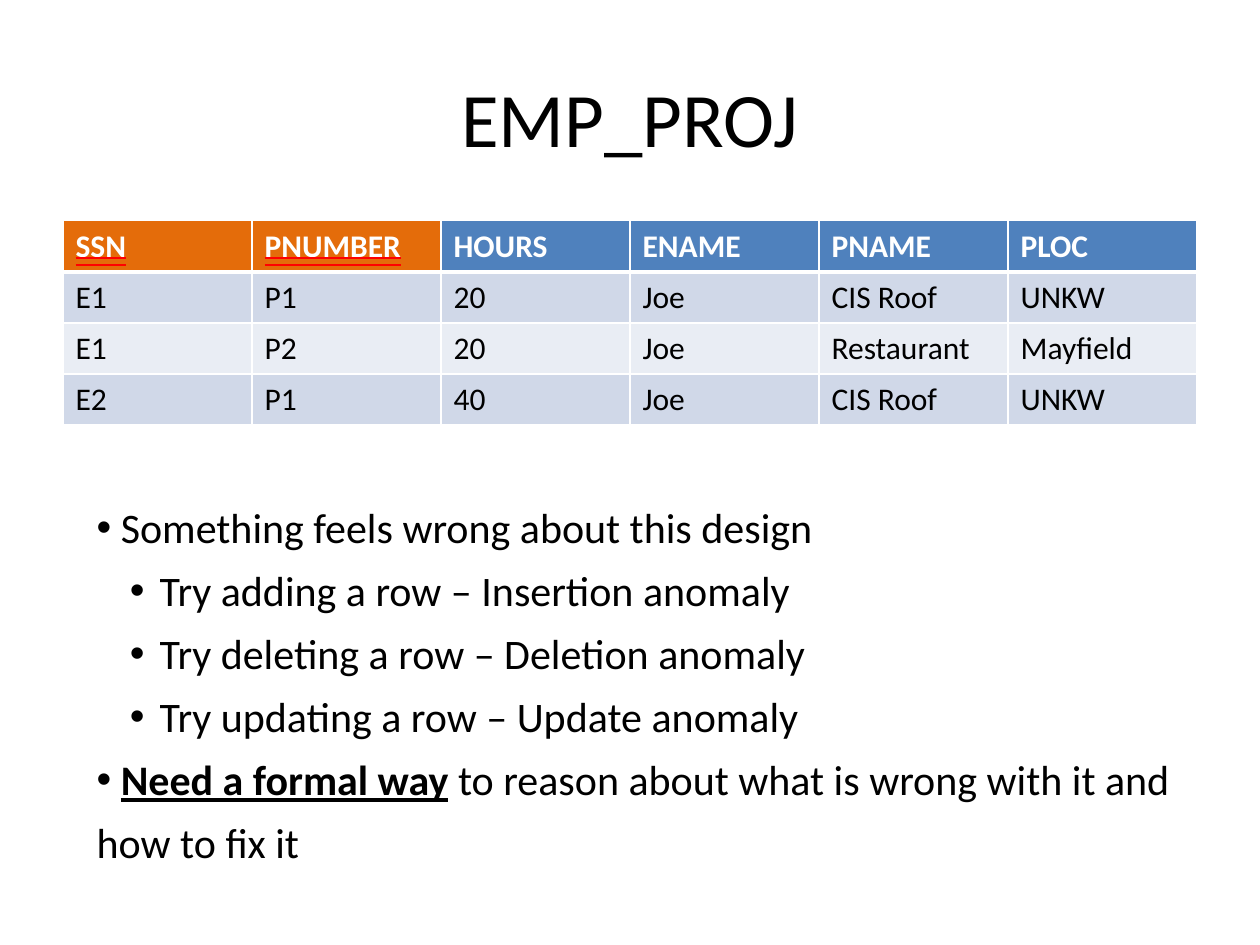
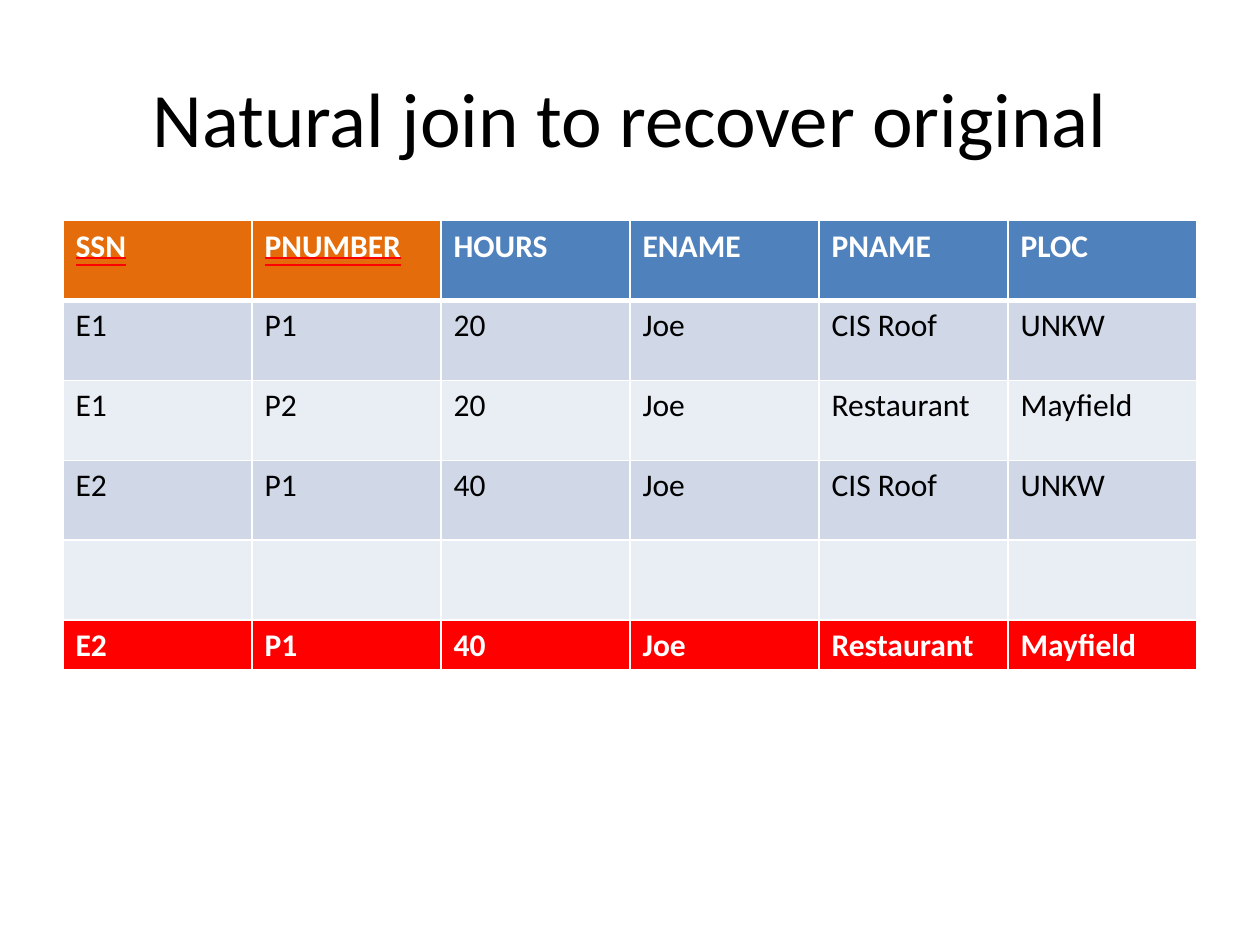
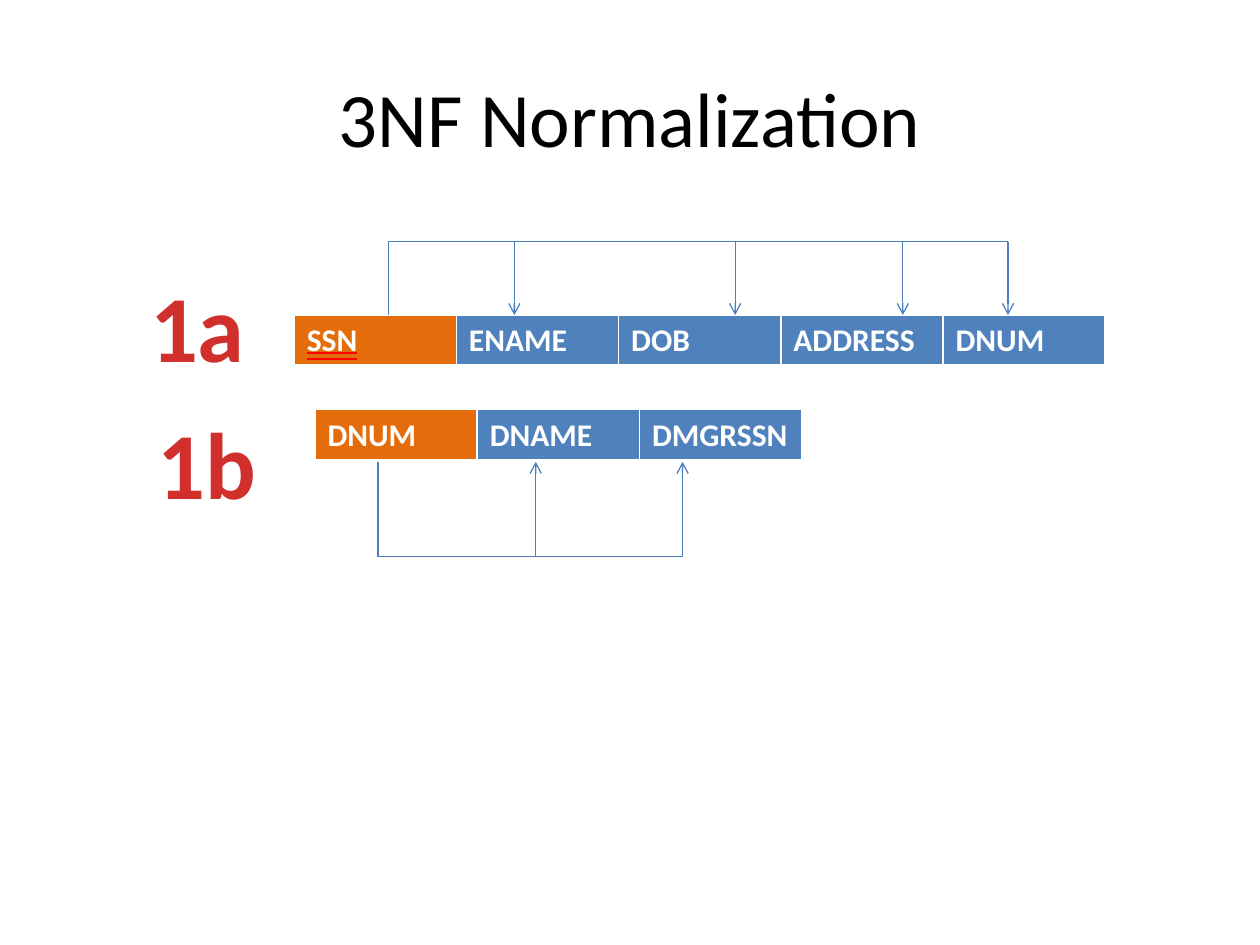
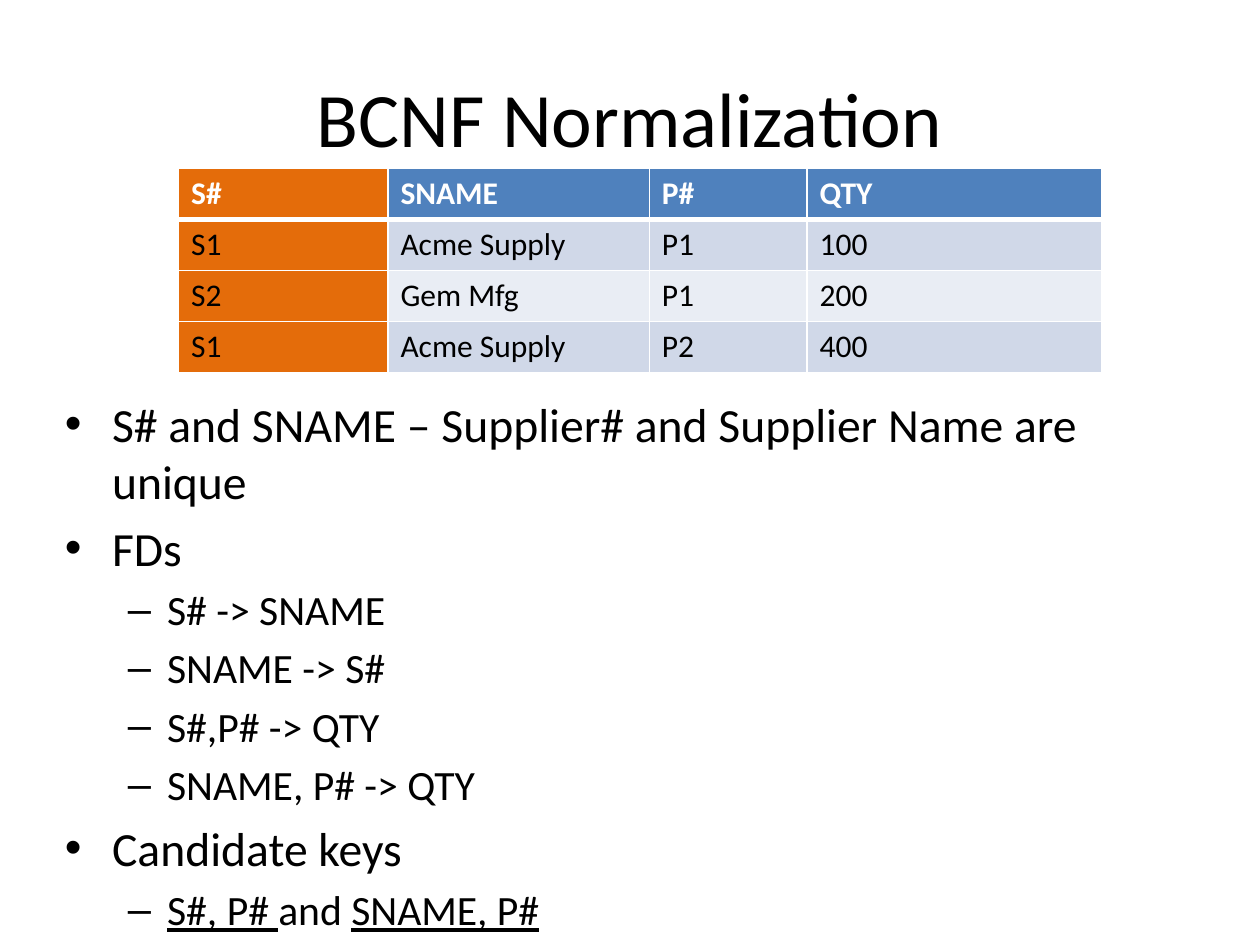
from lxml.etree import SubElement
from pptx import Presentation
from pptx.dml.color import RGBColor
from pptx.enum.shapes import MSO_CONNECTOR
from pptx.enum.text import MSO_ANCHOR, MSO_UNDERLINE, PP_ALIGN
from pptx.oxml import parse_xml
from pptx.oxml.ns import nsdecls, qn
from pptx.util import Cm, Pt

FONT = "Calibri"
COLORS = {
    "text": "000000", "white": "FFFFFF", "key": "E46C0A", "head": "4F81BD",
    "odd": "D0D8E8", "even": "E9EDF4", "alert": "FF0000", "line": "4B7EBC",
    "label": "D02F2C",
}


def add_run(p, text, size, color="text", bold=False, underline=None):
    r = p.add_run()
    r.text = text
    r.font.size = Pt(size)
    r.font.bold = bold
    r.font.underline = underline
    r.font.color.rgb = RGBColor.from_string(COLORS[color])
    if underline == MSO_UNDERLINE.DOUBLE_LINE:
        r.font._element.append(parse_xml(
            f'<a:uFill {nsdecls("a")}><a:solidFill><a:srgbClr val="{COLORS["alert"]}"/>'
            '</a:solidFill></a:uFill>'))
    r.font.name = FONT


def add_grid(s, x, y, widths, height, rows, keys=1, underline=None, head="head"):
    tbl = s.shapes.add_table(len(rows), len(widths), Cm(x), Cm(y),
                             Cm(sum(widths)), Cm(height * len(rows))).table
    for col, width in zip(tbl.columns, widths):
        col.width = Cm(width)
    for i, row in enumerate(rows):
        tbl.rows[i].height = Cm(height)
        for j, text in enumerate(row):
            cell = tbl.cell(i, j)
            tcPr = cell._tc.get_or_add_tcPr()
            for side in "LRTB":
                thick = (i, side) in ((0, "B"), (1, "T"))
                tcPr.append(parse_xml(
                    f'<a:ln{side} {nsdecls("a")} w="{Pt(3 if thick else 1)}"><a:solidFill>'
                    f'<a:srgbClr val="{COLORS["white"]}"/></a:solidFill></a:ln{side}>'))
            is_key = i == 0 and j < keys
            fill = "key" if is_key else head if i == 0 else "odd" if i % 2 else "even"
            cell.fill.solid()
            cell.fill.fore_color.rgb = RGBColor.from_string(COLORS[fill])
            if text:
                add_run(cell.text_frame.paragraphs[0], text, 18, "text" if i else "white",
                        i == 0, underline if is_key else None)
    return tbl


prs = Presentation()
prs.slide_width, prs.slide_height = Cm(25.4), Cm(19.05)

slides = []
for title in ("EMP_PROJ", "Natural join to recover original",
              "3NF Normalization", "BCNF Normalization"):
    s = prs.slides.add_slide(prs.slide_layouts[5])
    sp = s.shapes.title
    sp.left, sp.top, sp.width, sp.height = Cm(1.27), Cm(0.76), Cm(22.86), Cm(3.18)
    tf = sp.text_frame
    tf.vertical_anchor = MSO_ANCHOR.MIDDLE
    p = tf.paragraphs[0]
    p.alignment = PP_ALIGN.CENTER
    add_run(p, title, 44)
    slides.append(s)
emp_proj, natural_join, third_nf, bcnf = slides

DOUBLE = MSO_UNDERLINE.DOUBLE_LINE
ROW = 1.03
emp_widths = [3.81] * 6
emp_rows = [
    ["SSN", "PNUMBER", "HOURS", "ENAME", "PNAME", "PLOC"],
    ["E1", "P1", "20", "Joe", "CIS Roof", "UNKW"],
    ["E1", "P2", "20", "Joe", "Restaurant", "Mayfield"],
    ["E2", "P1", "40", "Joe", "CIS Roof", "UNKW"],
]
add_grid(emp_proj, 1.27, 4.45, emp_widths, ROW, emp_rows, 2, DOUBLE)
add_grid(natural_join, 1.27, 4.45, emp_widths, 1.61, emp_rows + [[""] * 6], 2, DOUBLE)
add_grid(natural_join, 1.27, 12.5, emp_widths, ROW,
         [["E2", "P1", "40", "Joe", "Restaurant", "Mayfield"]], 0, head="alert")

add_grid(third_nf, 6.35, 8.26, [3.27] * 3, ROW, [["DNUM", "DNAME", "DMGRSSN"]])
add_grid(third_nf, 5.93, 6.35, [3.27] * 5, ROW,
         [["SSN", "ENAME", "DOB", "ADDRESS", "DNUM"]], underline=DOUBLE)

for edge, bus, key, targets in (
    (6.35, 4.87, 7.83, (10.37, 14.82, 18.2, 20.32)),
    (9.31, 11.22, 7.62, (10.8, 13.76)),
):
    lines = [(key, edge, key, bus, False), (key, bus, targets[-1], bus, False)]
    lines += [(x, bus, x, edge, True) for x in targets]
    for x1, y1, x2, y2, arrow in lines:
        c = third_nf.shapes.add_connector(MSO_CONNECTOR.STRAIGHT,
                                          Cm(x1), Cm(y1), Cm(x2), Cm(y2))
        c.line.color.rgb = RGBColor.from_string(COLORS["line"])
        c.line.width = Pt(0.75)
        if arrow:
            SubElement(c.line._get_or_add_ln(), qn("a:tailEnd"), type="arrow")
        SubElement(c._element.spPr, qn("a:effectLst"))

for text, x, y in (("1a", 2.58, 5.28), ("1b", 2.78, 8.05)):
    tf = third_nf.shapes.add_textbox(Cm(x), Cm(y), Cm(2.8), Cm(2.57)).text_frame
    tf.word_wrap = False
    p = tf.paragraphs[0]
    p.alignment = PP_ALIGN.CENTER
    add_run(p, text, 54, "label", True)

tbl = add_grid(bcnf, 3.6, 3.39, [4.22, 5.27, 3.18, 5.95], ROW, [
    ["S#", "SNAME", "P#", "QTY"],
    ["S1", "Acme Supply", "P1", "100"],
    ["S2", "Gem Mfg", "P1", "200"],
    ["S1", "Acme Supply", "P2", "400"],
])
for i in range(1, 4):
    tbl.cell(i, 0).fill.fore_color.rgb = RGBColor.from_string(COLORS["key"])

emp_levels = [("•", 0, 0, 24), ("•", 1.27, -0.6, 24)]
emp_text = [
    (0, [(" Something feels wrong about this design",)]),
    (1, [("Try adding a row – Insertion anomaly",)]),
    (1, [("Try deleting a row – Deletion anomaly",)]),
    (1, [("Try updating a row – Update anomaly",)]),
    (0, [(" ",), ("Need a formal way", True, True),
         (" to reason about what is wrong with it and how to fix it",)]),
]
bcnf_levels = [("•", 0.95, -0.95, 27.2), ("–", 2.06, -0.79, 23.8)]
bcnf_text = [
    (0, [("S# and SNAME – Supplier# and Supplier Name are unique",)]),
    (0, [("FDs",)]),
    (1, [("S# -> SNAME",)]),
    (1, [("SNAME -> S#",)]),
    (1, [("S#,P# -> QTY",)]),
    (1, [("SNAME, P# -> QTY",)]),
    (0, [("Candidate keys",)]),
    (1, [("S#, P# ", False, True), ("and ",), ("SNAME, P#", False, True)]),
]
for s, box, spacing, before, levels, paragraphs in (
    (emp_proj, (1.7, 9.74, 22.23, 7.85), 1.25, 0, emp_levels, emp_text),
    (bcnf, (1.06, 7.83, 22.86, 10.03), 1, 0.2, bcnf_levels, bcnf_text),
):
    tf = s.shapes.add_textbox(*map(Cm, box)).text_frame
    tf.word_wrap = True
    for i, (level, runs) in enumerate(paragraphs):
        p = tf.add_paragraph() if i else tf.paragraphs[0]
        bullet, margin, indent, size = levels[level]
        p.level = level
        p.line_spacing = spacing
        p.space_before = Pt(before * size)
        pPr = p._p.get_or_add_pPr()
        pPr.set("marL", str(Cm(margin)))
        pPr.set("indent", str(Cm(indent)))
        SubElement(pPr, qn("a:buFont"), typeface="Arial")
        SubElement(pPr, qn("a:buChar"), char=bullet)
        for text, *style in runs:
            add_run(p, text, size, "text", *style)

prs.save("out.pptx")
